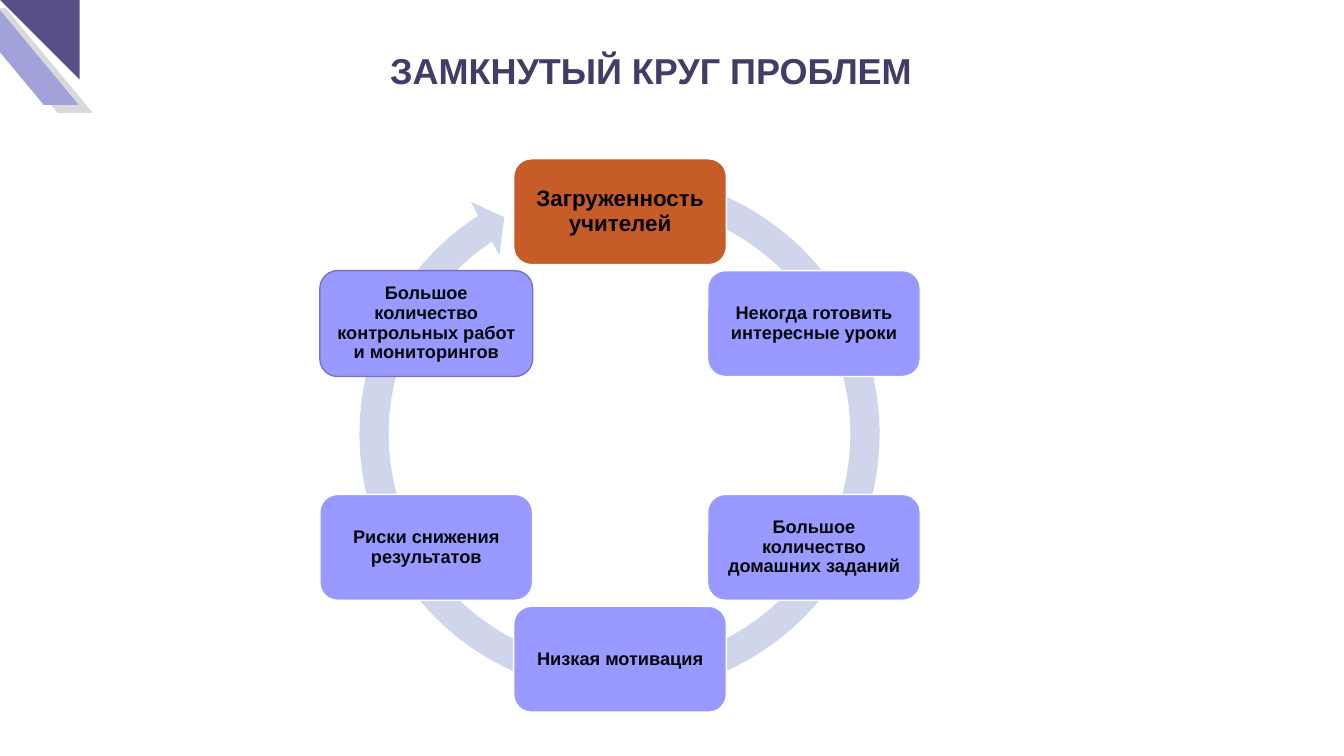
import math

import pptx
import pptx.util
import pptx.dml.color
import pptx.enum.shapes
import pptx.enum.text

Inches = pptx.util.Inches
Pt = pptx.util.Pt
Shapes = pptx.enum.shapes.MSO_SHAPE


def color(value):
    return pptx.dml.color.RGBColor.from_string(value)


def add_filled_shape(kind, left, top, width, height, fill):
    shape = slide.shapes.add_shape(kind, Inches(left), Inches(top), Inches(width), Inches(height))
    shape.shadow.inherit = False
    shape.fill.solid()
    shape.fill.fore_color.rgb = color(fill)
    shape.line.fill.background()
    return shape


presentation = pptx.Presentation()
presentation.slide_width = Inches(13.33)
presentation.slide_height = Inches(7.5)
slide = presentation.slides.add_slide(presentation.slide_layouts[5])

for left, top, fill in [(-0.29, 0.08, "D9D9D9"), (-0.43, 0, "A2A2DA")]:
    stripe = add_filled_shape(Shapes.PARALLELOGRAM, left, top, 1.21, 1.04, fill)
    stripe.adjustments[0] = 0.83
    stripe._element.spPr.xfrm.set("flipH", "1")

corner = add_filled_shape(Shapes.RIGHT_TRIANGLE, 0, 0, 0.79, 0.79, "565087")
corner._element.spPr.xfrm.set("flipH", "1")
corner._element.spPr.xfrm.set("flipV", "1")

title = slide.shapes.title
title.left, title.top = Inches(3.87), Inches(0.43)
title.width, title.height = Inches(6.16), Inches(0.53)
title_frame = title.text_frame
title_frame.word_wrap = True
title_frame.auto_size = pptx.enum.text.MSO_AUTO_SIZE.NONE
title_frame.vertical_anchor = pptx.enum.text.MSO_ANCHOR.TOP
title_frame.margin_left = 0
title_frame.margin_right = Inches(0.1)
title_frame.margin_top = title_frame.margin_bottom = Inches(0.05)
paragraph = title_frame.paragraphs[0]
paragraph.alignment = pptx.enum.text.PP_ALIGN.LEFT
run = paragraph.add_run()
run.text = "ЗАМКНУТЫЙ КРУГ ПРОБЛЕМ"
run.font.name = "Arial"
run.font.size = Pt(25.7)
run.font.bold = True
run.font.color.rgb = color("423D67")

ring = add_filled_shape(Shapes.CIRCULAR_ARROW, 3.41, 1.57, 5.47, 5.47, "CFD5EA")
for index, value in enumerate([0.053, 3.126, 142.076, 171.391, 0.055]):
    ring.adjustments[index] = value

center_x, center_y, radius = 6.15, 4.32, 2.22
box_width, box_height = 2.11, 1.05
problems = [
    ("Загруженность учителей", "C65D28", "FFFFFF", 16, "000000"),
    ("Некогда готовить интересные уроки", "9999FF", "FFFFFF", 13, "07080B"),
    ("Большое количество домашних заданий", "9999FF", "FFFFFF", 13, "07080B"),
    ("Низкая мотивация", "9999FF", "FFFFFF", 13, "07080B"),
    ("Риски снижения результатов", "9999FF", "FFFFFF", 13, "07080B"),
    ("Большое количество контрольных работ и мониторингов", "9999FF", "7A70C6", 13, "07080B"),
]
for index, (text, fill, outline, size, text_color) in enumerate(problems):
    angle = 2 * math.pi * index / len(problems)
    left = center_x + radius * math.sin(angle) - box_width / 2
    top = center_y - radius * math.cos(angle) - box_height / 2
    box = add_filled_shape(Shapes.ROUNDED_RECTANGLE, left, top, box_width, box_height, fill)
    box.line.color.rgb = color(outline)
    box.line.width = Pt(1)
    frame = box.text_frame
    frame.word_wrap = True
    frame.vertical_anchor = pptx.enum.text.MSO_ANCHOR.MIDDLE
    frame.margin_left = frame.margin_right = Inches(0.06)
    frame.margin_top = frame.margin_bottom = Inches(0.05)
    paragraph = frame.paragraphs[0]
    paragraph.alignment = pptx.enum.text.PP_ALIGN.CENTER
    paragraph.line_spacing = 0.9
    run = paragraph.add_run()
    run.text = text
    run.font.name = "Arial"
    run.font.size = Pt(size)
    run.font.bold = True
    run.font.color.rgb = color(text_color)

presentation.save("out.pptx")
